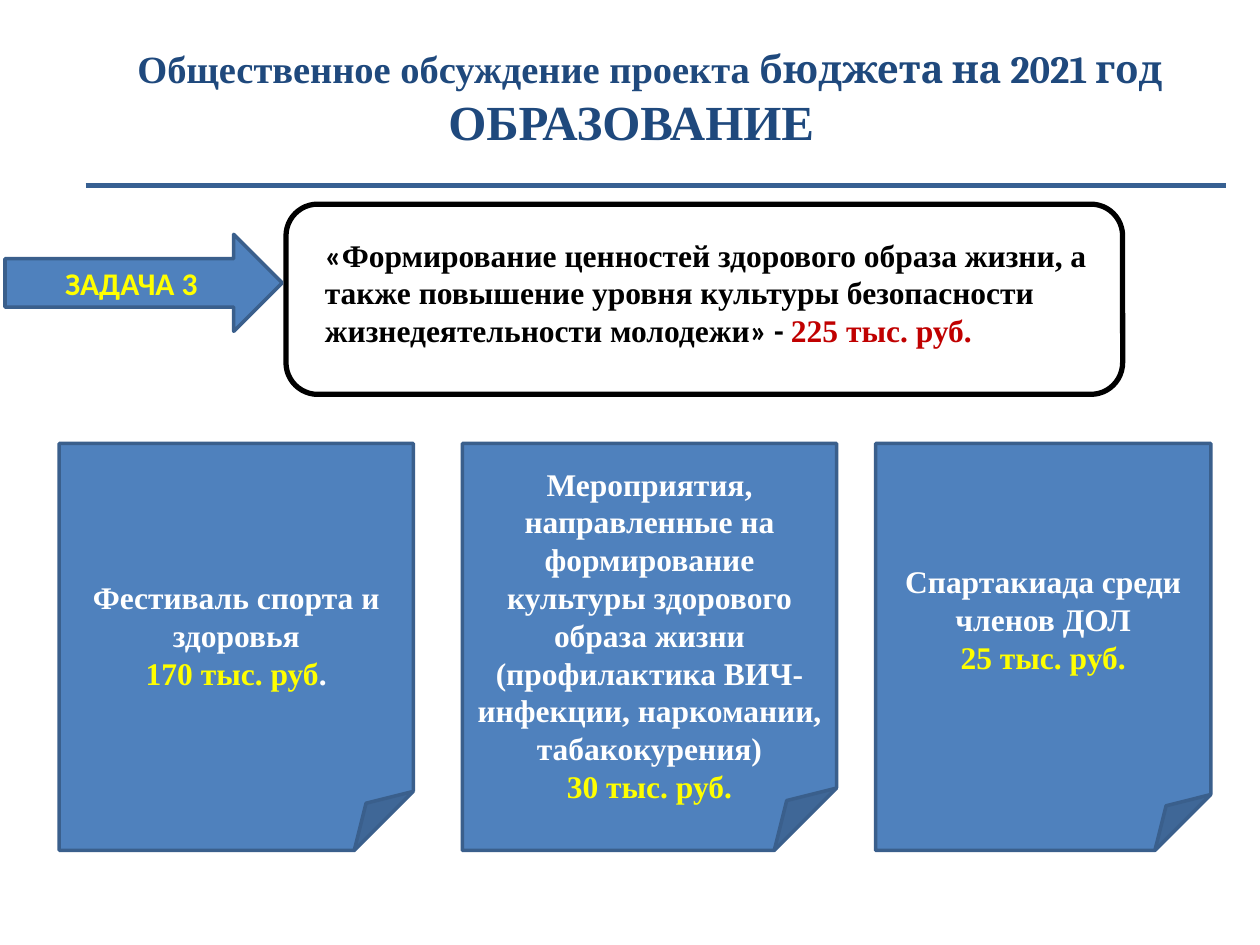
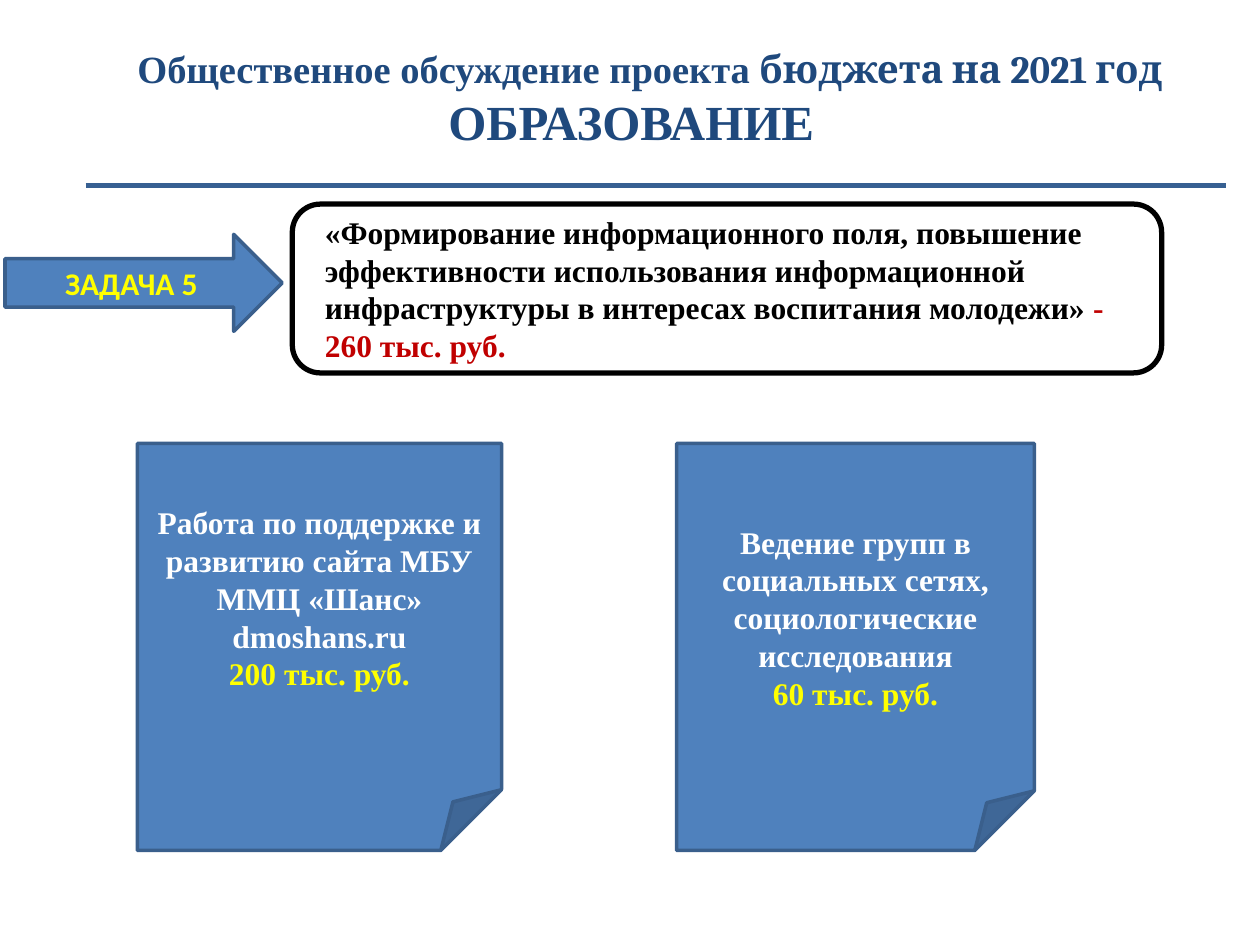
from dataclasses import dataclass

from lxml import etree
from pptx import Presentation
from pptx.dml.color import RGBColor
from pptx.enum import shapes, text
from pptx.oxml import ns
from pptx.util import Inches, Pt

NAVY = RGBColor(0x1F, 0x49, 0x7D)
RULE_BLUE = RGBColor(0x37, 0x60, 0x92)
CARD_BLUE = RGBColor(0x4F, 0x81, 0xBD)
EDGE_BLUE = RGBColor(0x3A, 0x5F, 0x8C)
YELLOW = RGBColor(0xFF, 0xFF, 0x00)
RED = RGBColor(0xC0, 0x00, 0x00)
WHITE = RGBColor(0xFF, 0xFF, 0xFF)
BLACK = RGBColor(0x00, 0x00, 0x00)
SERIF = "Times New Roman"
SANS = "Calibri"
CAMBRIA = "Cambria"


@dataclass(frozen=True)
class Span:
    words: str
    color: RGBColor
    font: str = SERIF
    size: int = 18


@dataclass(frozen=True)
class Area:
    left: float
    top: float
    width: float
    height: float

    def lengths(self) -> tuple:
        return tuple(map(Inches, (self.left, self.top, self.width, self.height)))


@dataclass(frozen=True)
class Card:
    area: Area
    activity: str
    cost: tuple[Span, ...]
    top_inset: float = 0.05
    bottom_inset: float = 0.05


@dataclass(frozen=True)
class Task:
    label: str
    frame: Area
    goal_area: Area
    goal: tuple[Span, ...]
    cards: tuple[Card, ...]


TITLE = (
    (
        Span("Общественное обсуждение проекта ", NAVY, size=22),
        Span("бюджета на 2021 год", NAVY, CAMBRIA, 22),
    ),
    (Span("ОБРАЗОВАНИЕ", NAVY, size=28),),
)
TITLE_AREA = Area(0.51, 0.17, 9, 1.21)
ARROW_AREA = Area(0.04, 1.86, 2.2, 0.77)
CARD_TOP, CARD_HEIGHT = 3.52, 3.23


def card_area(left: float, width: float) -> Area:
    return Area(left, CARD_TOP, width, CARD_HEIGHT)


TASKS = (
    Task(
        "ЗАДАЧА 3",
        Area(2.27, 1.62, 6.64, 1.51),
        Area(2.48, 1.82, 6.54, 1.01),
        (
            Span("«", BLACK, SANS),
            Span(
                "Формирование ценностей здорового образа жизни, а также повышение "
                "уровня культуры безопасности жизнедеятельности молодежи",
                BLACK,
            ),
            Span("» - ", BLACK, SANS),
            Span("225 тыс. руб.", RED),
        ),
        (
            Card(
                card_area(0.47, 2.81),
                "Фестиваль спорта и здоровья",
                (Span("170 тыс. руб", YELLOW), Span(".", WHITE)),
                top_inset=0.33,
            ),
            Card(
                card_area(3.67, 2.97),
                "Мероприятия, направленные на формирование культуры здорового образа "
                "жизни (профилактика ВИЧ-инфекции, наркомании, табакокурения)",
                (Span("30 тыс. руб.", YELLOW),),
                top_inset=0.35,
            ),
            Card(
                card_area(6.95, 2.66),
                "Спартакиада среди членов ДОЛ",
                (Span("25 тыс. руб.", YELLOW),),
            ),
        ),
    ),
    Task(
        "ЗАДАЧА 5",
        Area(2.32, 1.62, 6.9, 1.34),
        Area(2.48, 1.64, 6.66, 1.31),
        (
            Span(
                "«Формирование информационного поля, повышение эффективности "
                "использования информационной инфраструктуры в интересах "
                "воспитания молодежи» ",
                BLACK,
            ),
            Span("- 260 тыс. руб.", RED),
        ),
        (
            Card(
                card_area(1.09, 2.89),
                "Работа по поддержке и развитию сайта МБУ ММЦ «Шанс» dmoshans.ru",
                (Span("200 тыс. руб.", YELLOW),),
                bottom_inset=0.35,
            ),
            Card(
                card_area(5.37, 2.84),
                "Ведение групп в социальных сетях, социологические исследования",
                (Span("60 тыс. руб.", YELLOW),),
            ),
        ),
    ),
)


def write_lines(frame, lines: tuple, align=text.PP_ALIGN.CENTER) -> None:
    frame.word_wrap = True
    for index, spans in enumerate(lines):
        para = frame.add_paragraph() if index else frame.paragraphs[0]
        para.alignment = align
        for span in spans:
            run = para.add_run()
            run.text = span.words
            run.font.name = span.font
            run.font.size = Pt(span.size)
            run.font.bold = True
            run.font.color.rgb = span.color


def add_blue_shape(page, kind, area: Area, lines: tuple):
    shape = page.shapes.add_shape(kind, *area.lengths())
    shape.shadow.inherit = False
    shape.fill.solid()
    shape.fill.fore_color.rgb = CARD_BLUE
    shape.line.color.rgb = EDGE_BLUE
    shape.line.width = Pt(2)
    shape.text_frame.vertical_anchor = text.MSO_ANCHOR.MIDDLE
    write_lines(shape.text_frame, lines)
    return shape


def add_header(page) -> None:
    rule = page.shapes.add_connector(
        shapes.MSO_CONNECTOR.STRAIGHT, *map(Inches, (0.68, 1.47, 9.73, 1.47))
    )
    rule.line.color.rgb = RULE_BLUE
    rule.line.width = Pt(3)
    etree.SubElement(rule._element.spPr, ns.qn("a:effectLst"))
    frame = page.shapes.add_textbox(*TITLE_AREA.lengths()).text_frame
    frame.vertical_anchor = text.MSO_ANCHOR.MIDDLE
    write_lines(frame, TITLE)
    frame.paragraphs[0]._p.get_or_add_pPr().set("marL", str(Inches(0.3)))


def add_goal(page, task: Task) -> None:
    outline = page.shapes.add_shape(
        shapes.MSO_SHAPE.ROUNDED_RECTANGLE, *task.frame.lengths()
    )
    outline.shadow.inherit = False
    outline.fill.background()
    outline.line.color.rgb = BLACK
    outline.line.width = Pt(3)
    box = page.shapes.add_textbox(*task.goal_area.lengths())
    write_lines(box.text_frame, (task.goal,), text.PP_ALIGN.LEFT)
    box.text_frame.auto_size = text.MSO_AUTO_SIZE.SHAPE_TO_FIT_TEXT


def add_card(page, card: Card) -> None:
    lines = ((Span(card.activity, WHITE),), card.cost)
    shape = add_blue_shape(page, shapes.MSO_SHAPE.FOLDED_CORNER, card.area, lines)
    shape.text_frame.margin_top = Inches(card.top_inset)
    shape.text_frame.margin_bottom = Inches(card.bottom_inset)


def add_task_page(deck, task: Task) -> None:
    page = deck.slides.add_slide(deck.slide_layouts[6])
    add_goal(page, task)
    for card in task.cards:
        add_card(page, card)
    label = ((Span(task.label, YELLOW, SANS),),)
    add_blue_shape(page, shapes.MSO_SHAPE.RIGHT_ARROW, ARROW_AREA, label)
    add_header(page)


def main() -> None:
    deck = Presentation()
    deck.slide_width = Inches(10)
    deck.slide_height = Inches(7.5)
    for task in TASKS:
        add_task_page(deck, task)
    deck.save("out.pptx")


if __name__ == "__main__":
    main()
